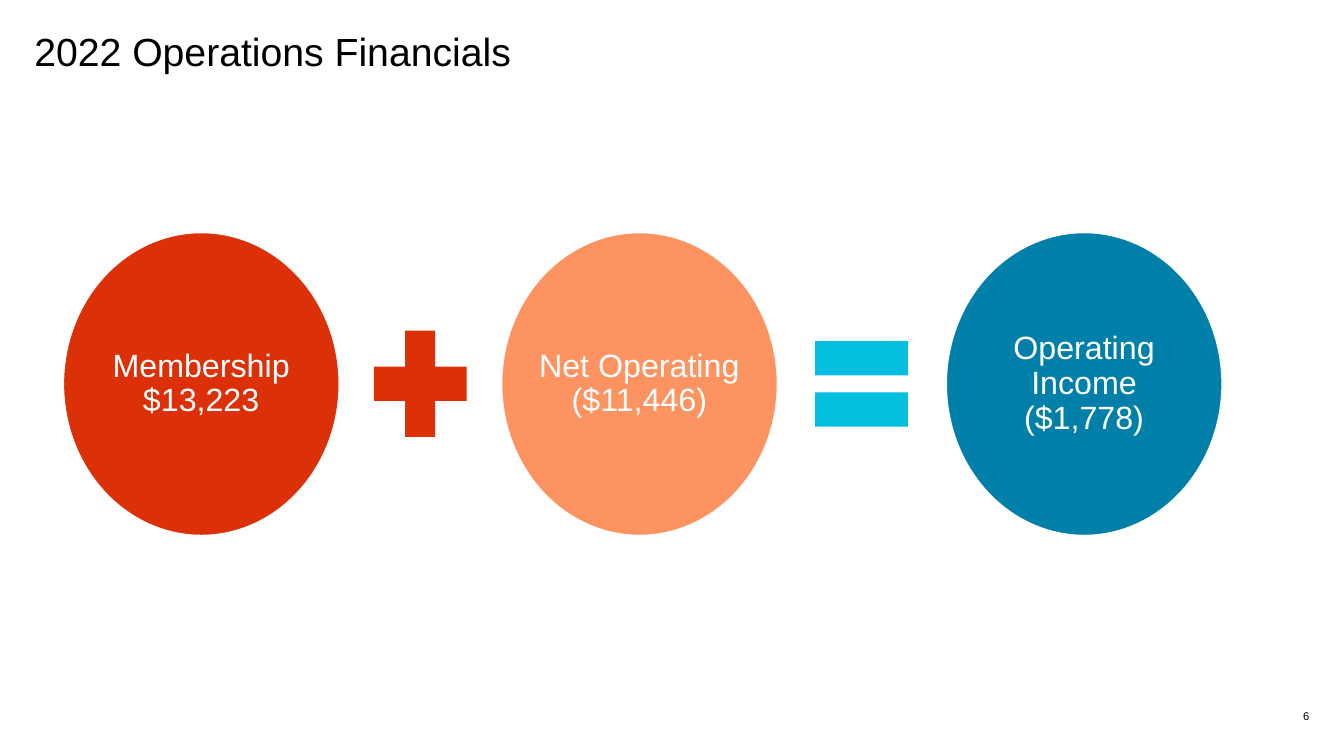
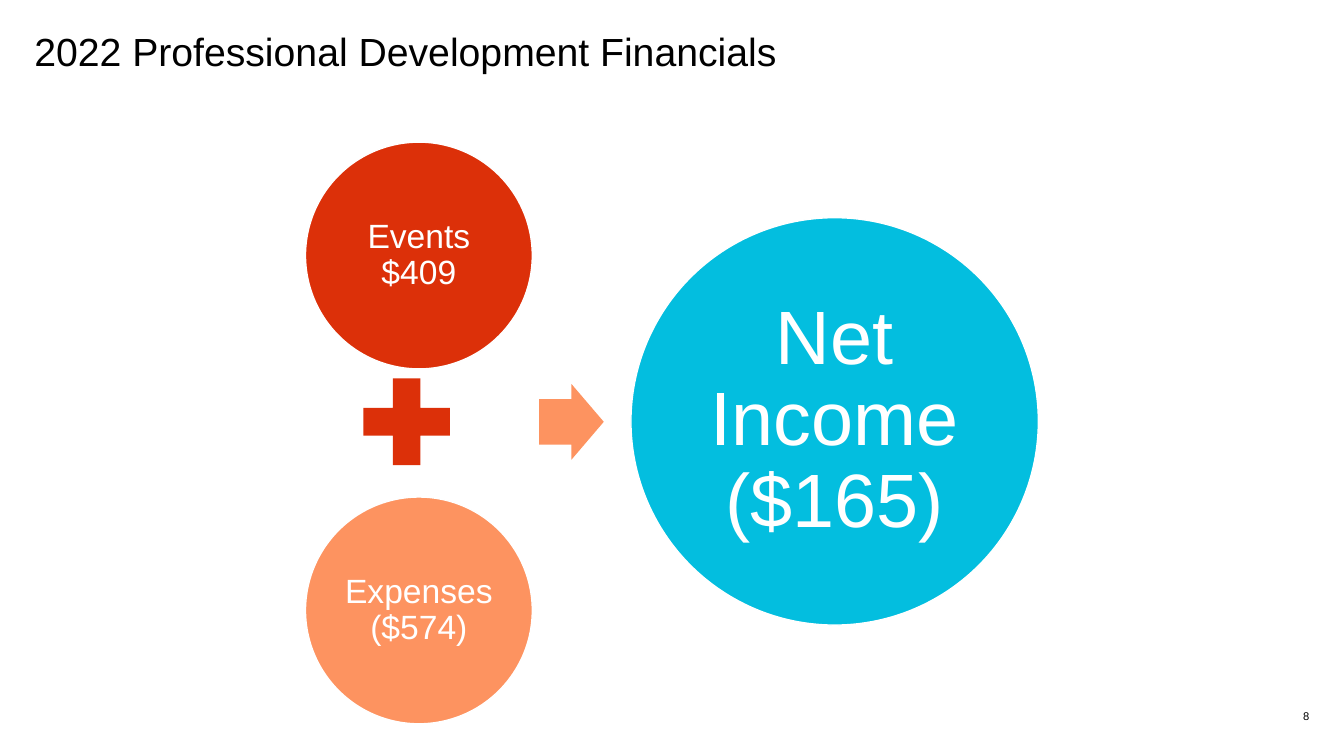
from pptx import Presentation
from pptx import util as u
from pptx.dml import color
from pptx.enum import shapes, text

Pt = u.Pt
KIND = shapes.MSO_SHAPE
ALIGN = text.PP_ALIGN
ANCHOR = text.MSO_ANCHOR
RED, PEACH, CYAN, BLUE = "DC3009", "FD9360", "03BEDF", "0080A8"
BLACK, WHITE = "000000", "FFFFFF"


def rgb(code):
    return color.RGBColor.from_string(code)


def write(frame, words, size=24, ink=BLACK, align=ALIGN.LEFT,
          anchor=ANCHOR.MIDDLE, space=1.0, side=0):
    frame.word_wrap = True
    frame.vertical_anchor = anchor
    frame.margin_left = frame.margin_right = Pt(side)
    frame.margin_top = frame.margin_bottom = 0
    para = frame.paragraphs[0]
    para.alignment = align
    para.line_spacing = space
    run = para.add_run()
    run.text = words
    run.font.name = "Arial"
    run.font.size = Pt(size)
    run.font.color.rgb = rgb(ink)


class Deck:
    """Holds the deck style and the current slide."""

    def __init__(self):
        self.prs = Presentation()
        self.prs.slide_width, self.prs.slide_height = Pt(960), Pt(540)
        self.slide = None

    def page(self, title, num):
        self.slide = self.prs.slides.add_slide(self.prs.slide_layouts[6])
        self.label(24.5, 23.8, 910, 29.5, title, size=28, space=0.9)
        self.label(902.9, 500.4, 32.4, 15.8, num, size=8,
                   align=ALIGN.RIGHT, anchor=ANCHOR.BOTTOM)

    def label(self, x, y, w, h, words, **style):
        box = self.slide.shapes.add_textbox(Pt(x), Pt(y), Pt(w), Pt(h))
        write(box.text_frame, words, **style)

    def paint(self, shape, fill, edge=0):
        shape.shadow.inherit = False
        shape.fill.solid()
        shape.fill.fore_color.rgb = rgb(fill)
        if edge:
            shape.line.color.rgb = rgb(WHITE)
            shape.line.width = Pt(edge)
        else:
            shape.line.fill.background()

    def sign(self, kind, x, y, w, h, fill, adjust=(), edge=0):
        shape = self.slide.shapes.add_shape(kind, Pt(x), Pt(y), Pt(w), Pt(h))
        for i, value in enumerate(adjust):
            shape.adjustments[i] = value
        self.paint(shape, fill, edge)
        return shape

    def oval(self, x, y, w, h, fill, words, size, edge=1):
        shape = self.sign(KIND.OVAL, x, y, w, h, fill, edge=edge)
        write(shape.text_frame, words, size=size, ink=WHITE,
              align=ALIGN.CENTER, space=0.9, side=-3)

    def cross(self, x, y, w, h, across, down, fill):
        a, b = (w - across) / 2, (h - down) / 2
        c, d = a + across, b + down
        dots = [(0, b), (a, b), (a, 0), (c, 0), (c, b), (w, b),
                (w, d), (c, d), (c, h), (a, h), (a, d), (0, d)]
        dots = [(Pt(x + p), Pt(y + q)) for p, q in dots]
        form = self.slide.shapes.build_freeform(*dots[0])
        form.add_line_segments(dots[1:], close=True)
        self.paint(form.convert_to_shape(), fill)


def main():
    deck = Deck()

    deck.page("2022 Operations Financials", "6")
    sums = [(44.8, RED, "Membership $13,223"),
            (357.8, PEACH, "Net Operating ($11,446)"),
            (675.4, BLUE, "Operating Income ($1,778)")]
    for x, fill, words in sums:
        deck.oval(x, 165.6, 198, 217.4, fill, words, 23, edge=2)
    deck.cross(267, 236.2, 66.4, 75.8, 21.4, 24.4, RED)
    deck.sign(KIND.MATH_EQUAL, 570.4, 222.4, 90, 103.6, CYAN)

    deck.page("2022 Professional Development Financials", "8")
    parts = [(101.5, RED, "Events $409"), (355, PEACH, "Expenses ($574)")]
    for y, fill, words in parts:
        deck.oval(218.2, y, 162, 162, fill, words, 24)
    deck.sign(KIND.MATH_PLUS, 248.4, 259.2, 84.2, 84.2, RED, [0.235])
    deck.sign(KIND.RIGHT_ARROW, 385.2, 274.3, 46.1, 54, PEACH, [0.6, 0.5])
    deck.oval(450.7, 155.5, 291, 291, CYAN, "Net Income ($165)", 54)

    deck.prs.save("out.pptx")


if __name__ == "__main__":
    main()
